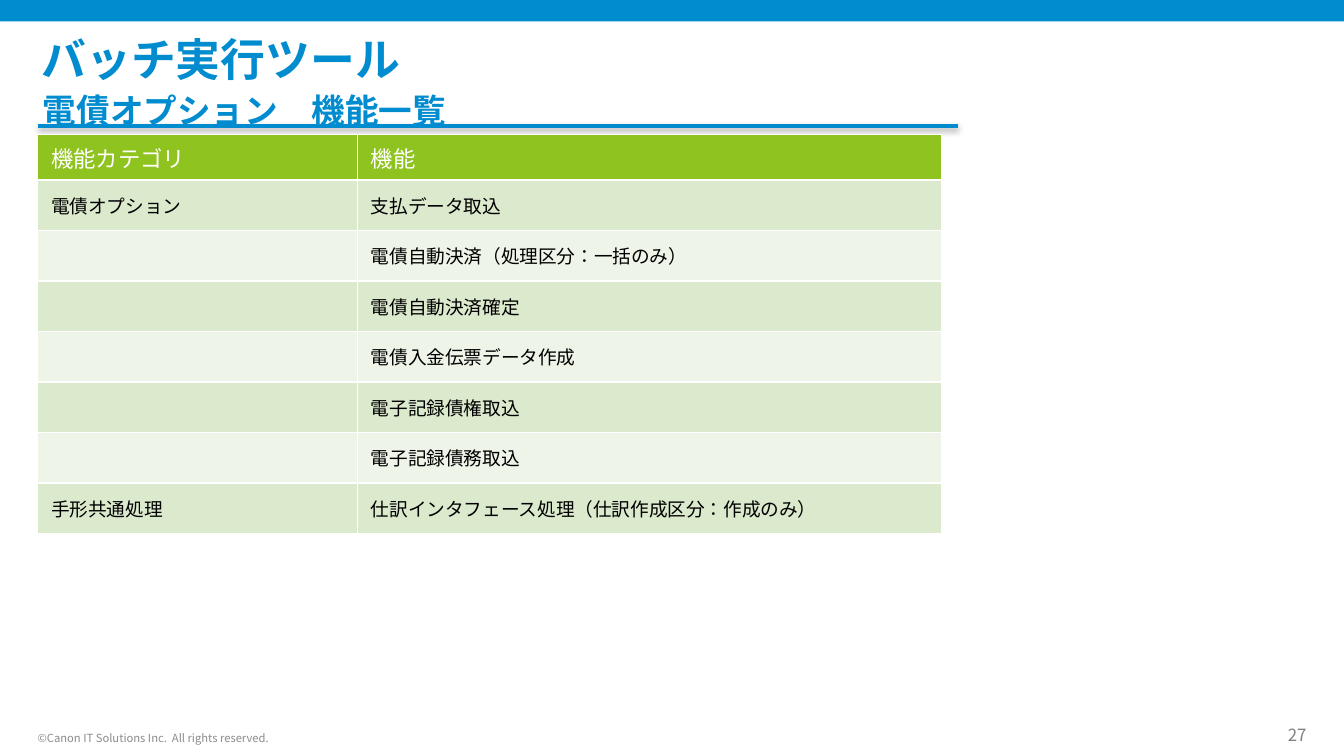
from lxml import etree
from pptx import Presentation
from pptx import util as u
from pptx.dml.color import RGBColor
from pptx.enum import lang, shapes, text
from pptx.oxml.ns import qn

BLUE = RGBColor(0x00, 0x8C, 0xCF)
GREEN = RGBColor(0x8F, 0xC3, 0x1F)
BANDS = (RGBColor(0xDB, 0xE9, 0xCD), RGBColor(0xEE, 0xF5, 0xE8))
WHITE = RGBColor(0xFF, 0xFF, 0xFF)
BLACK = RGBColor(0x00, 0x00, 0x00)
PAGE_GRAY = RGBColor(0x80, 0x80, 0x80)
COPYRIGHT_GRAY = RGBColor(0x8C, 0x8C, 0x8C)
FONT = "Noto Sans CJK JP"

HEADINGS = ("機能カテゴリ", "機能")
FUNCTIONS = (
    ("電債オプション", "支払データ取込"),
    ("", "電債自動決済（処理区分：一括のみ）"),
    ("", "電債自動決済確定"),
    ("", "電債入金伝票データ作成"),
    ("", "電子記録債権取込"),
    ("", "電子記録債務取込"),
    ("手形共通処理", "仕訳インタフェース処理（仕訳作成区分：作成のみ）"),
)


def inches(*lengths):
    return [u.Inches(length) for length in lengths]


def write(para, words, size, color, bold=False):
    if not words:
        etree.SubElement(para._p, qn("a:endParaRPr"), sz=str(size * 100))
        return
    span = para.add_run()
    span.text = words
    style = {"name": FONT, "size": u.Pt(size), "bold": bold,
             "language_id": lang.MSO_LANGUAGE_ID.JAPANESE}
    for name, value in style.items():
        setattr(span.font, name, value)
    span.font.color.rgb = color
    etree.SubElement(span.font._element, qn("a:ea"), typeface=FONT)


def add_label(page, box, words, size, color, bold=False, inset=0,
              anchor=text.MSO_ANCHOR.MIDDLE, align=text.PP_ALIGN.LEFT):
    frame = page.shapes.add_textbox(*inches(*box)).text_frame
    layout = {"margin_left": u.Inches(inset), "margin_right": u.Inches(inset),
              "margin_top": 0, "margin_bottom": 0,
              "word_wrap": True, "vertical_anchor": anchor}
    for name, value in layout.items():
        setattr(frame, name, value)
    para = frame.paragraphs[0]
    para.alignment = align
    write(para, words, size, color, bold)


def add_header(page, box):
    left, top, width, height = box
    band = page.shapes.add_shape(shapes.MSO_SHAPE.RECTANGLE, *inches(left, top, width, 0.16))
    band.shadow.inherit = False
    band.fill.solid()
    band.fill.fore_color.rgb = BLUE
    band.line.fill.background()

    bottom = top + height
    rule = page.shapes.add_connector(
        shapes.MSO_CONNECTOR.STRAIGHT, *inches(left + 0.28, bottom, left + 7.13, bottom))
    rule.line.color.rgb = BLUE
    rule.line.width = u.Pt(2)
    effects = etree.SubElement(rule._element.spPr, qn("a:effectLst"))
    shadow = etree.SubElement(
        effects, qn("a:outerShdw"), blurRad=str(u.Pt(3.1)), dist=str(u.Pt(1.6)),
        dir="5400000", rotWithShape="0")
    shade = etree.SubElement(shadow, qn("a:srgbClr"), val=str(BLACK))
    etree.SubElement(shade, qn("a:alpha"), val="38000")

    add_label(page, (left + 0.31, top + 0.24, 7.87, 0.39), "バッチ実行ツール", 24, BLUE, True)
    add_label(page, (left + 0.22, top + 0.64, 6.69, 0.35), "電債オプション　機能一覧",
              18, BLUE, True, inset=0.1)


def add_function_table(page, box):
    left, top, width, height = box
    head_height, category_width = 0.34, 2.38
    rows = (HEADINGS,) + FUNCTIONS
    table = page.shapes.add_table(len(rows), len(HEADINGS), *inches(*box)).table
    for column, size in zip(table.columns, (category_width, width - category_width)):
        column.width = u.Inches(size)
    body_height = (height - head_height) / len(FUNCTIONS)
    for index, words in enumerate(rows):
        heading = index == 0
        table.rows[index].height = u.Inches(head_height if heading else body_height)
        for cell, label in zip(table.rows[index].cells, words):
            cell.vertical_anchor = text.MSO_ANCHOR.MIDDLE
            cell.fill.solid()
            cell.fill.fore_color.rgb = GREEN if heading else BANDS[(index - 1) % 2]
            write(cell.text_frame.paragraphs[0], label,
                  12 if heading else 10, WHITE if heading else BLACK)


def add_footer(page, box):
    left, top, width, height = box
    bottom = text.MSO_ANCHOR.BOTTOM
    add_label(page, (left, top, 2.36, height),
              "©Canon IT Solutions Inc.  All rights reserved.", 6, COPYRIGHT_GRAY, anchor=bottom)
    add_label(page, (left + width - 0.39, top, 0.39, height), "27", 9, PAGE_GRAY,
              anchor=bottom, align=text.PP_ALIGN.RIGHT)


def main():
    deck = Presentation()
    deck.slide_width = u.Inches(10)
    deck.slide_height = deck.slide_width * 9 // 16
    page = deck.slides.add_slide(deck.slide_layouts[6])
    add_header(page, (0, 0, 10, 0.94))
    add_function_table(page, (0.28, 1, 6.73, 2.97))
    add_footer(page, (0.28, 5.39, 9.44, 0.15))
    deck.save("out.pptx")


if __name__ == "__main__":
    main()
